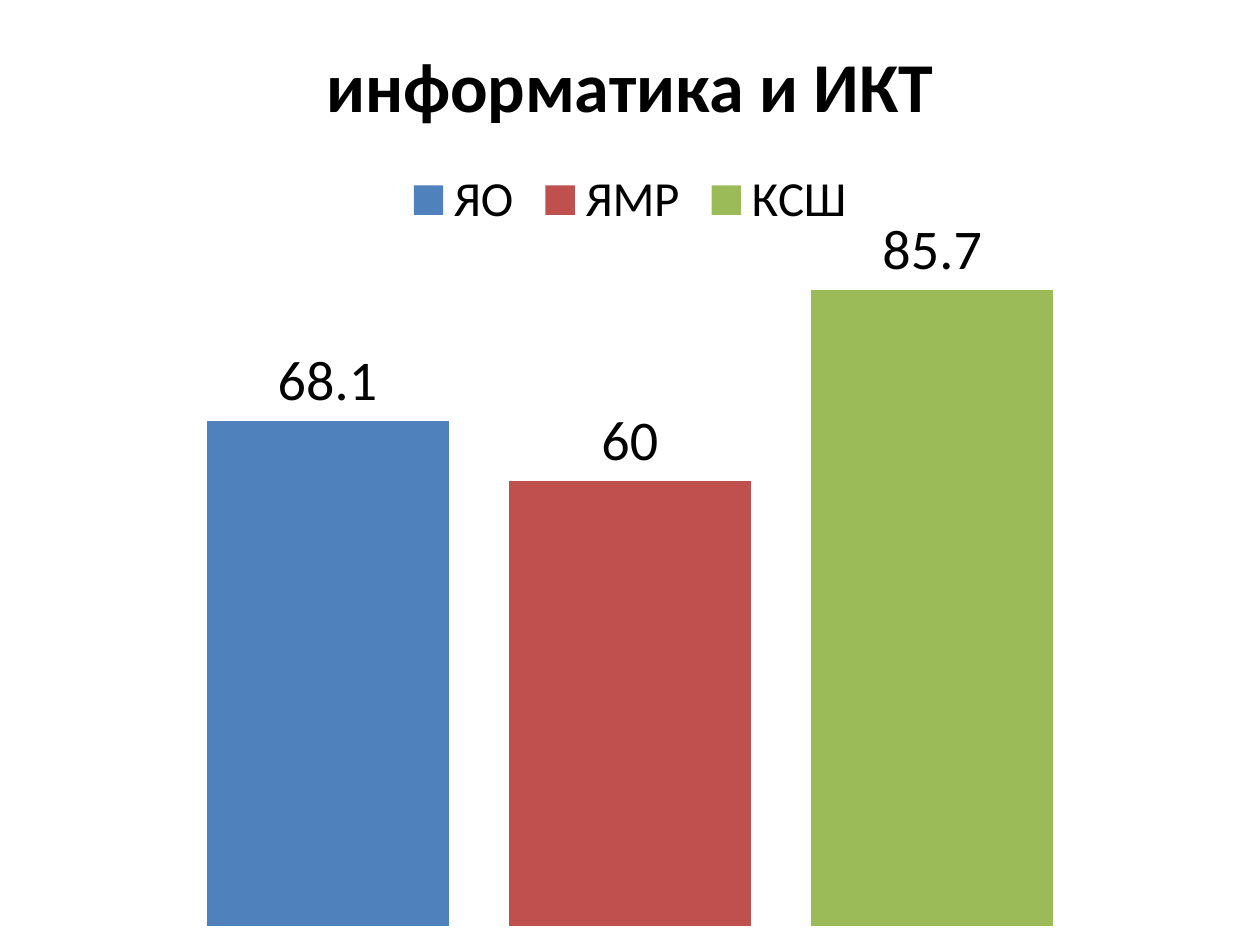
from pptx import Presentation
from pptx.chart.data import CategoryChartData
from pptx.dml.color import RGBColor
from pptx.enum.chart import XL_CHART_TYPE, XL_LABEL_POSITION, XL_LEGEND_POSITION
from pptx.util import Pt

WIDTH, HEIGHT = Pt(720), Pt(540)
FONT = "Calibri"
BLACK = RGBColor(0x00, 0x00, 0x00)
BLUE = RGBColor(0x4F, 0x81, 0xBD)
RED = RGBColor(0xC0, 0x50, 0x4D)
GREEN = RGBColor(0x9B, 0xBB, 0x59)

TITLE = "информатика и ИКТ"
SCORES = [("ЯО", 68.1, BLUE), ("ЯМР", 60, RED), ("КСШ", 85.7, GREEN)]


def set_font(font, size, bold=False):
    font.name = FONT
    font.size = Pt(size)
    font.bold = bold
    font.color.rgb = BLACK


def add_score_chart(s):
    data = CategoryChartData(number_format="General")
    data.categories = ["1"]
    for name, score, _ in SCORES:
        data.add_series(name, [score])
    chart = s.shapes.add_chart(
        XL_CHART_TYPE.COLUMN_CLUSTERED, 0, 0, WIDTH, HEIGHT, data
    ).chart
    set_font(chart.font, 10)
    return chart


def add_title(chart):
    chart.has_title = True
    chart.chart_title.include_in_layout = False
    p = chart.chart_title.text_frame.paragraphs[0]
    p.text = TITLE
    set_font(p.font, 40, bold=True)
    set_font(p.runs[0].font, 40, bold=True)


def add_legend(chart):
    chart.has_legend = True
    chart.legend.position = XL_LEGEND_POSITION.TOP
    chart.legend.include_in_layout = False
    set_font(chart.legend.font, 28)


def hide_axes(chart):
    for axis in (chart.category_axis, chart.value_axis):
        axis.visible = False
        axis.has_major_gridlines = False
    chart.value_axis.minimum_scale = 0
    chart.value_axis.maximum_scale = 90


def style_columns(chart):
    plot = chart.plots[0]
    plot.gap_width = 150
    plot.overlap = -25
    plot.vary_by_categories = False
    for series, (_, _, color) in zip(plot.series, SCORES):
        series.format.fill.solid()
        series.format.fill.fore_color.rgb = color
        labels = series.data_labels
        labels.show_value = True
        labels.position = XL_LABEL_POSITION.OUTSIDE_END
        set_font(labels.font, 32)


def main():
    prs = Presentation()
    prs.slide_width, prs.slide_height = WIDTH, HEIGHT
    s = prs.slides.add_slide(prs.slide_layouts[6])
    chart = add_score_chart(s)
    add_title(chart)
    add_legend(chart)
    hide_axes(chart)
    style_columns(chart)
    prs.save("out.pptx")


if __name__ == "__main__":
    main()
